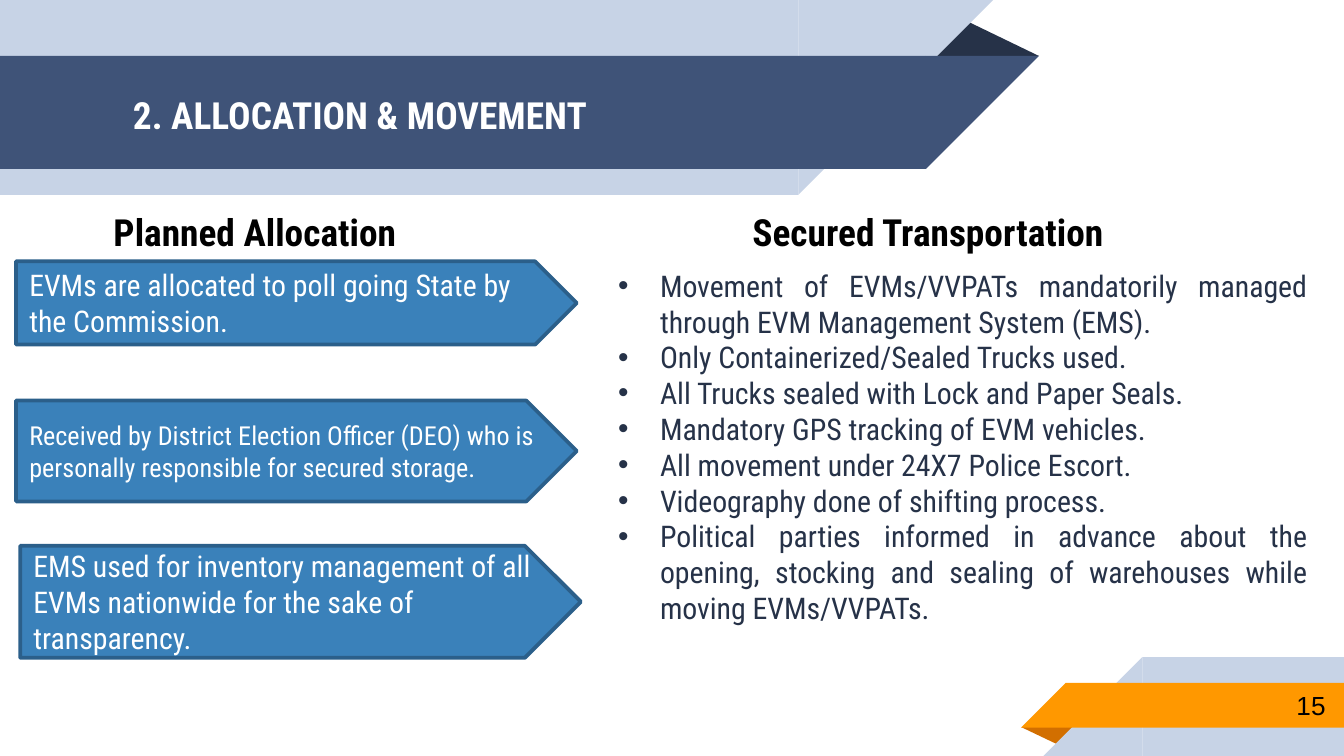
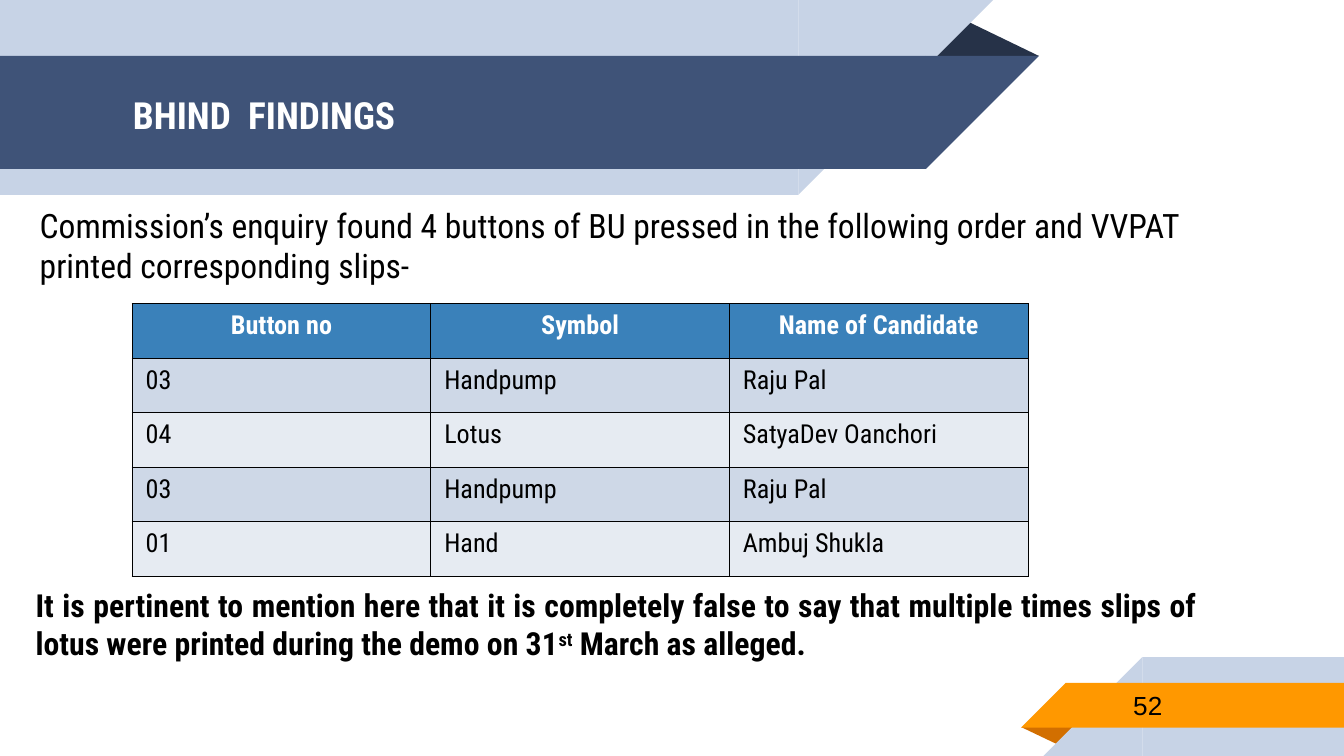
from pptx import Presentation
from pptx.dml.color import RGBColor
from pptx.enum import shapes, text
from pptx.oxml import ns
from pptx.util import Pt
from lxml import etree


class Theme:
    font, number_font = "Roboto Condensed", "Arial"
    white, black, ink = "FFFFFF", "000000", "263248"
    band, band_light = "3F5378", "C7D3E6"
    tab, tab_fold = "FF9800", "D26F00"
    accent, accent_line, row = "3A81BA", "2B5F8A", "CED8E7"
    heading, lead, verdict, body, small = 20, 18, 17, 16, 14


RECT = shapes.MSO_SHAPE.RECTANGLE
CORNER = shapes.MSO_SHAPE.RIGHT_TRIANGLE
FOLD = shapes.MSO_SHAPE.ISOSCELES_TRIANGLE
LEFT, CENTER, RIGHT, JUSTIFY = (text.PP_ALIGN.LEFT, text.PP_ALIGN.CENTER,
                                text.PP_ALIGN.RIGHT, text.PP_ALIGN.JUSTIFY)
MIDDLE, TOP = text.MSO_ANCHOR.MIDDLE, text.MSO_ANCHOR.TOP

# kind, box (left, top, width, height), colour, xfrm settings
BACKDROP = [
    (FOLD, (495.4, 10, 61.2, 20), Theme.ink, {}),
    (RECT, (0, 0, 427.7, 104.4), Theme.band_light, {}),
    (CORNER, (427.7, 0, 104.4, 104.4), Theme.band_light, {"flipV": "1"}),
    (RECT, (0, 30, 496.1, 60.5), Theme.band, {}),
    (CORNER, (496.1, 30, 60.5, 60.5), Theme.band, {"flipV": "1"}),
    (FOLD, (547.2, 389.6, 31, 10), Theme.tab_fold, {"rot": "10800000"}),
    (RECT, (612, 352, 108, 53), Theme.band_light, {}),
    (CORNER, (559, 352, 53, 53), Theme.band_light, {"flipH": "1"}),
    (RECT, (571, 365.8, 149, 24), Theme.tab, {}),
    (CORNER, (547, 365.8, 24, 24), Theme.tab, {"flipH": "1"}),
]
TITLE_BOX = (64, 31, 414, 60.5)
NUMBER_BOX = (600, 365, 117.2, 25.2)

MOVEMENT = {
    "title": "2. ALLOCATION & MOVEMENT",
    "number": "15",
    "headings": [("Planned Allocation ", 8.6, CENTER),
                 ("Secured Transportation", 396, LEFT)],
    # wording, left, top, height, size
    "steps": [
        ("EVMs are allocated to poll going State by the Commission.",
         8.6, 140, 44.6, Theme.body),
        ("Received by District Election Officer (DEO) who is personally "
         "responsible for secured storage.", 8.6, 214.6, 54, Theme.small),
        ("EMS used for inventory management of all EVMs nationwide for the "
         "sake of transparency.", 10.8, 292.4, 60, Theme.body),
    ],
    "transport": [
        "Movement of EVMs/VVPATs mandatorily managed through EVM Management "
        "System (EMS).",
        "Only Containerized/Sealed Trucks used.",
        "All Trucks sealed with Lock and Paper Seals.",
        "Mandatory GPS tracking of EVM vehicles.",
        "All movement under 24X7 Police Escort.",
        "Videography done of shifting process.",
        "Political parties informed in advance about the opening, stocking "
        "and sealing of warehouses while moving EVMs/VVPATs.",
    ],
}
FINDINGS = {
    "title": "BHIND  FINDINGS",
    "number": "52",
    "lead": "Commission’s enquiry found 4 buttons of BU pressed in the "
            "following order and VVPAT printed corresponding slips-",
    "presses": [
        ("Button no", "Symbol", "Name of Candidate"),
        ("03", "Handpump", "Raju Pal"),
        ("04", "Lotus", "SatyaDev Oanchori"),
        ("03", "Handpump", "Raju Pal"),
        ("01", "Hand", "Ambuj Shukla"),
    ],
    # wording, superscript
    "verdict": [
        ("It is pertinent to mention here that it is completely false to say "
         "that multiple times slips of lotus were printed during the demo on "
         "31", False),
        ("st", True),
        (" March as alleged.", False),
    ],
}


def rgb(value):
    return RGBColor.from_string(value)


def place(shape, box):
    shape.left, shape.top, shape.width, shape.height = map(Pt, box)


def add_run(paragraph, wording, size, color, bold=False, font=Theme.font, raised=False):
    run = paragraph.add_run()
    run.text = wording
    run.font.name, run.font.size, run.font.bold = font, Pt(size), bold
    run.font.color.rgb = rgb(color)
    if raised:
        run.font._element.set("baseline", "30000")


def write(frame, wording, size, color, align=LEFT, anchor=TOP, **style):
    frame.word_wrap = True
    frame.vertical_anchor = anchor
    paragraph = frame.paragraphs[0]
    paragraph.alignment = align
    add_run(paragraph, wording, size, color, **style)


def text_frame(slide, box):
    frame = slide.shapes.add_textbox(*map(Pt, box)).text_frame
    frame.word_wrap = True
    return frame


def add_filled(slide, kind, box, color):
    shape = slide.shapes.add_shape(kind, *map(Pt, box))
    shape.shadow.inherit = False
    shape.fill.solid()
    shape.fill.fore_color.rgb = rgb(color)
    shape.line.fill.background()
    return shape


def move_backdrop_to_layout(slide):
    """Draw the shared bands on a slide, then hand them to its layout."""
    tree = slide.slide_layout.shapes.element
    for index, (kind, box, color, settings) in enumerate(BACKDROP):
        shape = add_filled(slide, kind, box, color)
        if kind == FOLD:
            shape.adjustments[0] = 0.324
        for key, value in settings.items():
            shape.element.spPr.xfrm.set(key, value)
        shape.element.nvSpPr.cNvPr.set("id", str(100 + index))
        tree.insert(2 + index, shape.element)


def add_slide(deck, content, number_align):
    slide = deck.slides.add_slide(deck.slide_layouts[5])
    title = slide.shapes.title
    place(title, TITLE_BOX)
    write(title.text_frame, content["title"], Theme.heading, Theme.white,
          anchor=MIDDLE, bold=True)
    write(text_frame(slide, NUMBER_BOX), content["number"], Theme.small,
          Theme.black, number_align, MIDDLE, font=Theme.number_font)
    return slide


def add_bullet(paragraph, indent):
    properties = paragraph._p.get_or_add_pPr()
    properties.set("marL", str(Pt(indent)))
    properties.set("indent", str(-Pt(indent)))
    etree.SubElement(properties, ns.qn("a:buFont"), typeface=Theme.number_font)
    etree.SubElement(properties, ns.qn("a:buChar"), char="•")


def add_movement(slide, content):
    for wording, left, align in content["headings"]:
        write(text_frame(slide, (left, 108.7, 260.6, 31.5)), wording,
              Theme.heading, Theme.black, align, bold=True)
    for wording, left, top, height, size in content["steps"]:
        step = add_filled(slide, shapes.MSO_SHAPE.PENTAGON,
                          (left, top, 300.4, height), Theme.accent)
        step.line.color.rgb = rgb(Theme.accent_line)
        step.line.width = Pt(2)
        write(step.text_frame, wording, size, Theme.white, anchor=MIDDLE)
    frame = text_frame(slide, (324, 139.7, 383.6, 220))
    for index, wording in enumerate(content["transport"]):
        paragraph = frame.add_paragraph() if index else frame.paragraphs[0]
        add_bullet(paragraph, 22.5)
        paragraph.alignment = JUSTIFY
        add_run(paragraph, wording, Theme.body, Theme.ink)


def add_borders(cell):
    properties = cell._tc.get_or_add_tcPr()
    for index, side in enumerate(("lnL", "lnR", "lnT", "lnB")):
        line = etree.Element(ns.qn(f"a:{side}"), w=str(Pt(0.75)))
        fill = etree.SubElement(line, ns.qn("a:solidFill"))
        etree.SubElement(fill, ns.qn("a:srgbClr"), val=Theme.black)
        properties.insert(index, line)


def add_presses(slide, presses):
    row_height, column_width = 29.2, 160
    columns = len(presses[0])
    table = slide.shapes.add_table(
        len(presses), columns, Pt(70.8), Pt(162.8),
        Pt(column_width * columns), Pt(row_height * len(presses))).table
    for column in table.columns:
        column.width = Pt(column_width)
    for r, press in enumerate(presses):
        table.rows[r].height = Pt(row_height)
        header = r == 0
        for c, wording in enumerate(press):
            cell = table.cell(r, c)
            cell.fill.solid()
            cell.fill.fore_color.rgb = rgb(Theme.accent if header else Theme.row)
            if not header and r % 2 == 0:
                tint = cell._tc.tcPr.find(".//" + ns.qn("a:srgbClr"))
                etree.SubElement(tint, ns.qn("a:alpha"), val="50000")
            add_borders(cell)
            write(cell.text_frame, wording, Theme.small,
                  Theme.white if header else Theme.black,
                  CENTER if header else LEFT, bold=header)


def add_findings(slide, content):
    write(text_frame(slide, (14.2, 106, 652.3, 72.7)), content["lead"],
          Theme.lead, Theme.black)
    add_presses(slide, content["presses"])
    verdict = text_frame(slide, (12, 310.3, 637, 48.5)).paragraphs[0]
    verdict.alignment = JUSTIFY
    for wording, raised in content["verdict"]:
        add_run(verdict, wording, Theme.verdict, Theme.black, True, raised=raised)


def main():
    deck = Presentation()
    deck.slide_width, deck.slide_height = Pt(720), Pt(405)
    movement = add_slide(deck, MOVEMENT, RIGHT)
    move_backdrop_to_layout(movement)
    add_movement(movement, MOVEMENT)
    add_findings(add_slide(deck, FINDINGS, LEFT), FINDINGS)
    deck.save("out.pptx")


if __name__ == "__main__":
    main()
